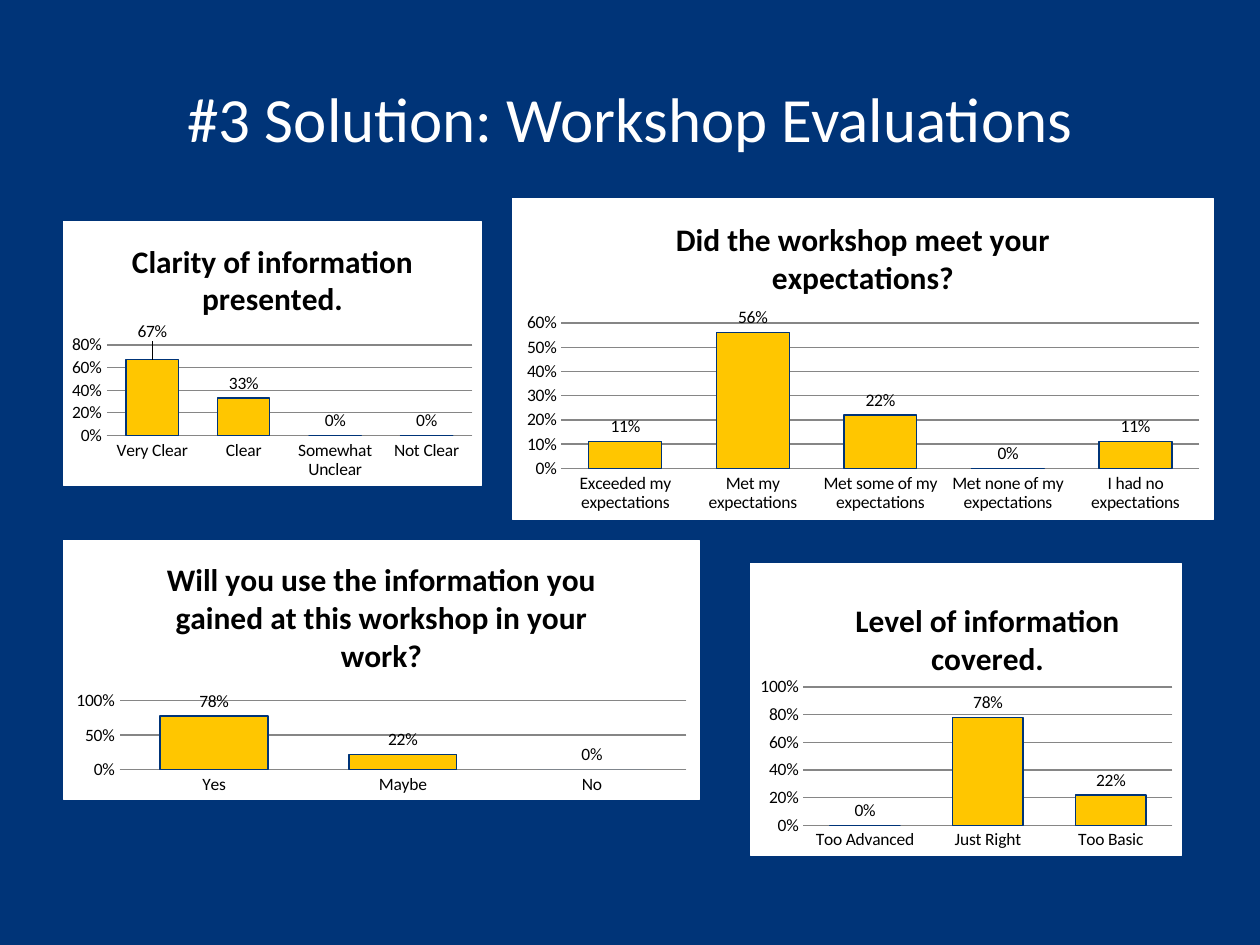
from dataclasses import dataclass

from lxml import etree
from pptx import Presentation
from pptx.chart.data import CategoryChartData
from pptx.dml.color import RGBColor as Rgb
from pptx.enum.chart import XL_CHART_TYPE as ChartType
from pptx.enum.chart import XL_LABEL_POSITION as LabelSpot
from pptx.enum.chart import XL_TICK_MARK as Tick
from pptx.enum.text import MSO_ANCHOR as Anchor
from pptx.enum.text import PP_ALIGN as Align
from pptx.oxml import parse_xml
from pptx.oxml.ns import nsdecls, qn
from pptx.util import Pt

SCALE = 914400 / 126


@dataclass(frozen=True)
class Theme:
    navy: str = "003478"
    white: str = "FFFFFF"
    black: str = "000000"
    gold: str = "FFC600"
    blue: str = "4F81BD"
    grid: str = "868686"
    font: str = "Calibri"
    heading: int = 36
    chart_title: int = 18
    chart_text: int = 10
    line: float = 0.75


THEME = Theme()

SURVEYS = [
    {
        "title": "Clarity of information presented.",
        "frame": (63, 221, 419, 265),
        "plot": (106, 345, 367, 91),
        "answers": {"Very Clear": 0.67, "Clear": 0.33, "Somewhat Unclear": 0, "Not Clear": 0},
        "top": 0.8,
        "step": 0.2,
        "raised_label": (0, -0.05),
    },
    {
        "title": "Level of information covered.",
        "frame": (750, 563, 432, 293),
        "plot": (803, 687, 370, 139),
        "answers": {"Too Advanced": 0, "Just Right": 0.78, "Too Basic": 0.22},
        "top": 1,
        "step": 0.2,
        "title_at": (0.23, 0.1),
    },
    {
        "title": "Did the workshop meet your expectations?",
        "frame": (512, 198, 702, 322),
        "plot": (561, 323, 639, 146),
        "answers": {
            "Exceeded my expectations": 0.11,
            "Met my expectations": 0.56,
            "Met some of my expectations": 0.22,
            "Met none of my expectations": 0,
            "I had no expectations": 0.11,
        },
        "top": 0.6,
        "step": 0.1,
    },
    {
        "title": "Will you use the information you gained at this workshop in your work?",
        "frame": (63, 540, 637, 260),
        "plot": (119, 701, 568, 69),
        "answers": {"Yes": 0.78, "Maybe": 0.22, "No": 0},
        "top": 1,
        "step": 0.5,
        "gold_points": 2,
    },
]


def px(*lengths):
    return [round(length * SCALE) for length in lengths]


def apply(target, values):
    for name, value in values.items():
        setattr(target, name, value)


def style_font(font, size, colour, bold=False):
    apply(font, {"name": THEME.font, "size": Pt(size), "bold": bold})
    font.color.rgb = Rgb.from_string(colour)


def style_line(line, colour):
    line.color.rgb = Rgb.from_string(colour)
    line.width = Pt(THEME.line)


def paint(element, colour):
    element.format.fill.solid()
    element.format.fill.fore_color.rgb = Rgb.from_string(colour)


def add_heading(page, text, frame):
    box = page.shapes.add_textbox(*px(*frame))
    apply(box.text_frame, {"word_wrap": True, "vertical_anchor": Anchor.MIDDLE})
    para = box.text_frame.paragraphs[0]
    para.alignment = Align.CENTER
    span = para.add_run()
    span.text = text
    style_font(span.font, THEME.heading, THEME.white)


def set_layout(parent, index, settings):
    for old in parent.findall(qn("c:layout")):
        parent.remove(old)
    layout = etree.Element(qn("c:layout"))
    manual = etree.SubElement(layout, qn("c:manualLayout"))
    for tag, value in settings.items():
        etree.SubElement(manual, qn(f"c:{tag}")).set("val", str(value))
    parent.insert(index, layout)


def place_plot(chart, frame, plot):
    left, top, width, height = frame
    x, y, plot_width, plot_height = plot
    set_layout(chart.element.chart.plotArea, 0, {
        "layoutTarget": "inner", "xMode": "edge", "yMode": "edge",
        "x": (x - left) / width, "y": (y - top) / height,
        "w": plot_width / width, "h": plot_height / height,
    })


def add_panel(chart):
    chart.element.chart.addnext(parse_xml(
        f'<c:spPr {nsdecls("c", "a")}>'
        f'<a:solidFill><a:srgbClr val="{THEME.white}"/></a:solidFill>'
        f'<a:ln w="{Pt(THEME.line)}"><a:solidFill><a:srgbClr val="{THEME.white}"/>'
        "</a:solidFill></a:ln></c:spPr>"
    ))


def add_chart_title(chart, text, spot):
    chart.has_title = True
    title = chart.chart_title
    title.include_in_layout = False
    para = title.text_frame.paragraphs[0]
    span = para.add_run()
    span.text = text
    style_font(span.font, THEME.chart_title, THEME.black, True)
    if spot:
        set_layout(title._element, 1, {
            "xMode": "edge", "yMode": "edge", "x": spot[0], "y": spot[1],
        })


def style_axes(chart, top, step):
    ticks = {"major_tick_mark": Tick.NONE, "minor_tick_mark": Tick.NONE}
    apply(chart.category_axis, ticks)
    style_line(chart.category_axis.format.line, THEME.grid)
    axis = chart.value_axis
    apply(axis, ticks | {
        "minimum_scale": 0, "maximum_scale": top, "major_unit": step,
        "has_major_gridlines": True,
    })
    apply(axis.tick_labels, {"number_format": "0%", "number_format_is_linked": False})
    axis.format.line.fill.background()
    style_line(axis.major_gridlines.format.line, THEME.grid)


def style_columns(chart, gold_points, raised_label):
    plot = chart.plots[0]
    apply(plot, {"gap_width": 75, "overlap": -25, "vary_by_categories": False})
    series = plot.series[0]
    series.invert_if_negative = False
    paint(series, THEME.blue)
    for column in [series.points[i] for i in range(gold_points)] or [series]:
        paint(column, THEME.gold)
        style_line(column.format.line, THEME.navy)
    labels = series.data_labels
    apply(labels, {
        "show_value": True, "number_format": "0%",
        "number_format_is_linked": False, "position": LabelSpot.OUTSIDE_END,
    })
    style_font(labels.font, THEME.chart_text, THEME.black)
    if raised_label:
        index, shift = raised_label
        series.points[index].data_label.position = LabelSpot.OUTSIDE_END
        label = labels._element.find(qn("c:dLbl"))
        set_layout(label, 1, {"x": 0, "y": shift})


def add_survey(page, survey):
    answers = survey["answers"]
    data = CategoryChartData(number_format="0%")
    data.categories = list(answers)
    data.add_series("Series 1", list(answers.values()))
    chart = page.shapes.add_chart(
        ChartType.COLUMN_CLUSTERED, *px(*survey["frame"]), data
    ).chart
    chart.has_legend = False
    style_font(chart.font, THEME.chart_text, THEME.black)
    add_panel(chart)
    add_chart_title(chart, survey["title"], survey.get("title_at"))
    style_axes(chart, survey["top"], survey["step"])
    style_columns(chart, survey.get("gold_points", 0), survey.get("raised_label"))
    place_plot(chart, survey["frame"], survey["plot"])


def main():
    deck = Presentation()
    deck.slide_width, deck.slide_height = px(1260, 945)
    page = deck.slides.add_slide(deck.slide_layouts[6])
    fill = page.background.fill
    fill.solid()
    fill.fore_color.rgb = Rgb.from_string(THEME.navy)
    add_heading(page, "#3 Solution: Workshop Evaluations", (63, 38, 1134, 158))
    for survey in SURVEYS:
        add_survey(page, survey)
    deck.save("out.pptx")


if __name__ == "__main__":
    main()
